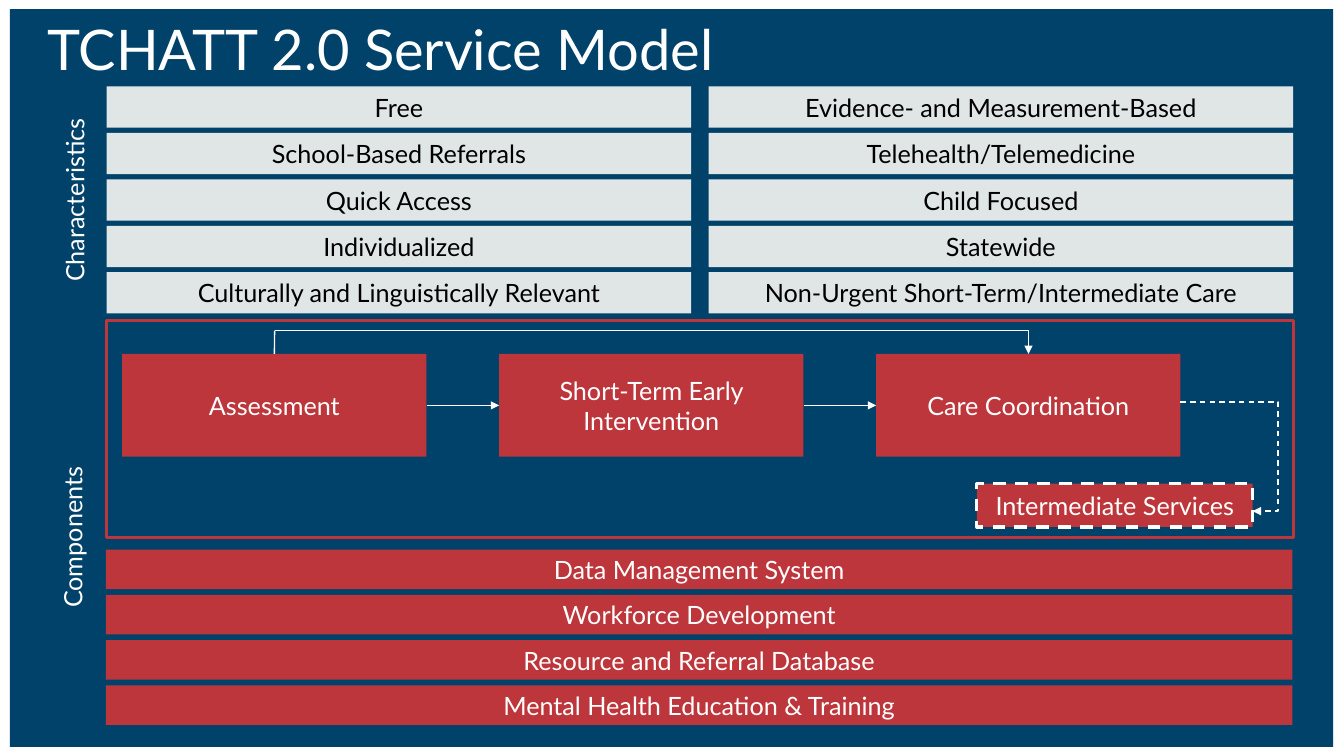
"""Build the TCHATT 2.0 service model slide."""
from pptx import Presentation
from pptx.dml.color import RGBColor
from pptx.enum.dml import MSO_LINE
from pptx.enum.shapes import MSO_CONNECTOR, MSO_SHAPE
from pptx.enum.text import MSO_ANCHOR, MSO_AUTO_SIZE, PP_ALIGN
from pptx.oxml.ns import qn
from pptx.util import Cm, Pt
from lxml import etree

RECT = MSO_SHAPE.RECTANGLE
STRAIGHT, ELBOW = MSO_CONNECTOR.STRAIGHT, MSO_CONNECTOR.ELBOW
DASH = MSO_LINE.DASH
CENTER, LEFT = PP_ALIGN.CENTER, PP_ALIGN.LEFT
MIDDLE, TOP = MSO_ANCHOR.MIDDLE, MSO_ANCHOR.TOP
COLORS = {name: RGBColor.from_string(value) for name, value in {
    "navy": "01426A", "red": "BD363C", "gray": "E0E6E6",
    "white": "FFFFFF", "black": "000000"}.items()}

prs = Presentation()
prs.slide_width, prs.slide_height = Cm(33.87), Cm(19.05)
s = prs.slides.add_slide(prs.slide_layouts[5])


def add_box(x, y, w, h, text, fill, color):
    sp = s.shapes.add_shape(RECT, Cm(x), Cm(y), Cm(w), Cm(h))
    sp.shadow.inherit = False
    sp.fill.solid()
    sp.fill.fore_color.rgb = COLORS[fill]
    sp.line.fill.background()
    tf = sp.text_frame
    tf.word_wrap = True
    tf.vertical_anchor = MIDDLE
    p = tf.paragraphs[0]
    p.text = text
    p.alignment = CENTER
    p.font.name, p.font.size = "Lato", Pt(18)
    p.font.color.rgb = COLORS[color]
    return sp


def add_line(kind, x1, y1, x2, y2, arrow=True, bend=None):
    c = s.shapes.add_connector(kind, Cm(x1), Cm(y1), Cm(x2), Cm(y2))
    c.line.color.rgb = COLORS["white"]
    c.line.width = Pt(1)
    props = c._element.spPr
    if arrow:
        etree.SubElement(c.line._get_or_add_ln(), qn("a:tailEnd"), type="triangle")
    if bend is not None:
        guides = props.find(qn("a:prstGeom")).get_or_add_avLst()
        etree.SubElement(guides, qn("a:gd"), name="adj1", fmla=f"val {bend}")
    etree.SubElement(props, qn("a:effectLst"))
    return c


title = s.shapes.title
title.left, title.top, title.width, title.height = Cm(0.25), Cm(0.23), Cm(33.35), Cm(18.82 - 0.23)
title.height = Cm(18.59)
title.fill.solid()
title.fill.fore_color.rgb = COLORS["navy"]
tf = title.text_frame
tf.auto_size = MSO_AUTO_SIZE.NONE
tf.vertical_anchor = TOP
tf.margin_left = Cm(0.95)
p = tf.paragraphs[0]
p.text = "TCHATT 2.0 Service Model"
p.alignment = LEFT
p.font.name, p.font.size = "Lato", Pt(40)
p.font.color.rgb = COLORS["white"]

frame = s.shapes.add_shape(RECT, Cm(2.69), Cm(8.08), Cm(29.9), Cm(5.46))
frame.shadow.inherit = False
frame.fill.background()
frame.line.color.rgb = COLORS["red"]
frame.line.width = Pt(2.25)

characteristics = [
    ("Free", "Evidence- and Measurement-Based"),
    ("School-Based Referrals", "Telehealth/Telemedicine"),
    ("Quick Access", "Child Focused"),
    ("Individualized", "Statewide"),
    ("Culturally and Linguistically Relevant", "Non-Urgent Short-Term/Intermediate Care"),
]
for row, pair in enumerate(characteristics):
    for col, text in enumerate(pair):
        add_box(2.69 + 15.17 * col, 2.18 + 1.17 * row, 14.73, 1.04, text, "gray", "black")

for text, x, y, h in [("Characteristics", 1.24, 2.18, 5.72), ("Components", 1.19, 8.74, 9.6)]:
    label = s.shapes.add_textbox(Cm(x), Cm(y), Cm(1.27), Cm(h))
    tf = label.text_frame
    tf.word_wrap = True
    tf.vertical_anchor = MIDDLE
    tf._txBody.bodyPr.set("vert", "vert270")
    p = tf.paragraphs[0]
    p.text = text
    p.alignment = CENTER
    p.font.name, p.font.size = "Lato", Pt(18)
    p.font.color.rgb = COLORS["white"]

stages = [
    add_box(3.08 + 9.5 * i, 8.92, 7.67, 2.59, text, "red", "white")
    for i, text in enumerate(["Assessment", "Short-Term Early Intervention", "Care Coordination"])
]
intermediate = add_box(24.62, 12.19, 6.95, 1.09, "Intermediate Services", "red", "white")
intermediate.line.color.rgb = COLORS["white"]
intermediate.line.width = Pt(2.25)
intermediate.line.dash_style = DASH

for before, after in zip(stages, stages[1:]):
    c = add_line(STRAIGHT, 10.75, 10.21, 12.58, 10.21)
    c.begin_connect(before, 3)
    c.end_connect(after, 1)

riser = add_line(STRAIGHT, 6.92, 8.92, 6.92, 8.33, arrow=False)
riser.begin_connect(stages[0], 0)
add_line(ELBOW, 6.92, 8.33, 25.92, 8.92, bend=100000)
optional = add_line(ELBOW, 29.75, 10.13, 31.57, 12.88, bend=135000)
optional.line.dash_style = DASH

components = ["Data Management System", "Workforce Development",
              "Resource and Referral Database", "Mental Health Education & Training"]
for i, text in enumerate(components):
    add_box(2.67, 13.85 + 1.14 * i, 29.9, 1, text, "red", "white")

prs.save("out.pptx")
